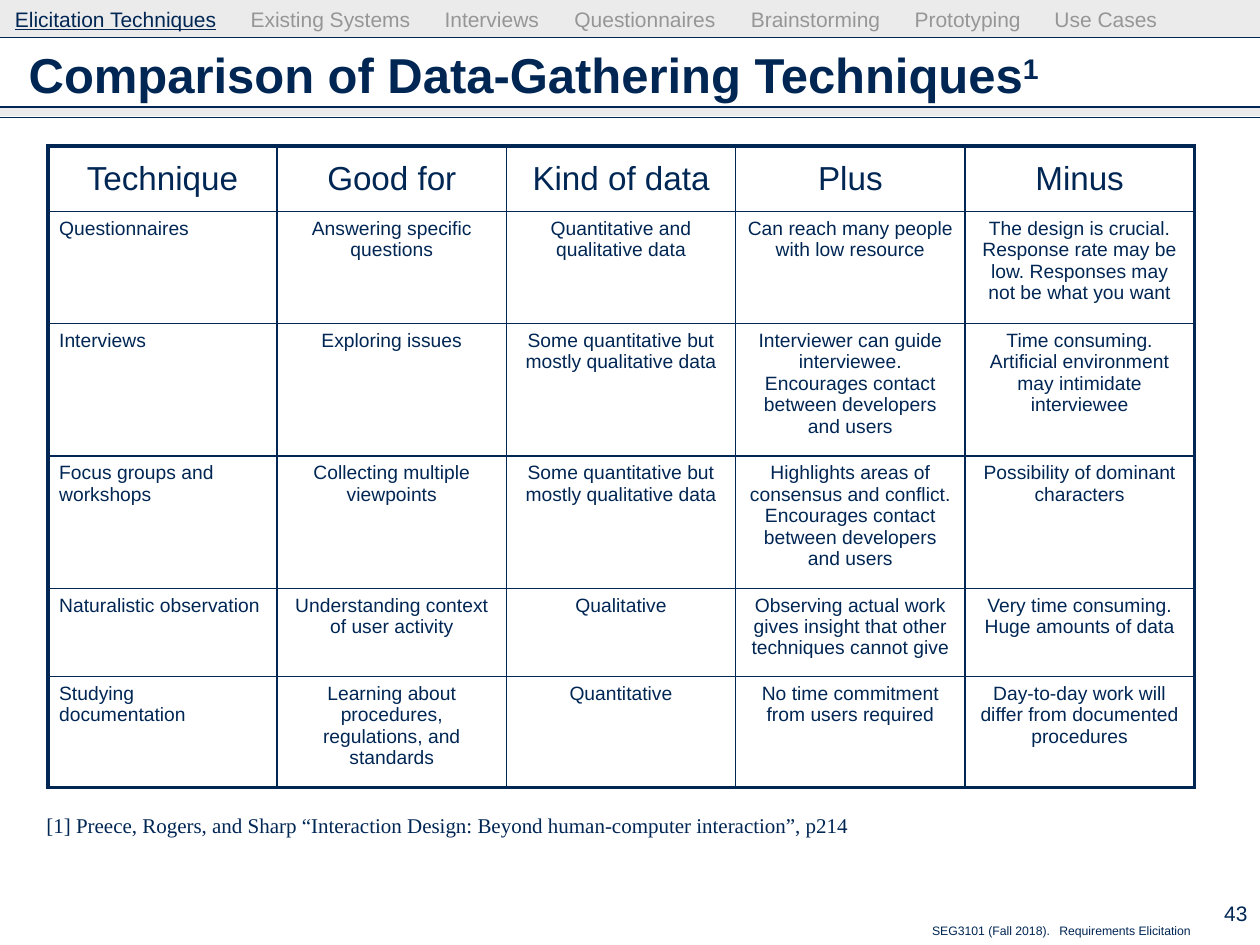
import pptx
import pptx.dml.color
import pptx.enum.shapes
import pptx.enum.text
import pptx.oxml.ns
import pptx.util
from lxml import etree

Inches = pptx.util.Inches
Pt = pptx.util.Pt
ALIGN = pptx.enum.text.PP_ALIGN
ANCHOR = pptx.enum.text.MSO_ANCHOR


def color(hex_string):
    return pptx.dml.color.RGBColor.from_string(hex_string)


def add_element(parent, tag, **attributes):
    values = {name: str(value) for name, value in attributes.items()}
    return etree.SubElement(parent, pptx.oxml.ns.qn(tag), values)


class SlideBuilder:
    navy = "002654"
    band = "CDCDCD"
    muted = "969696"
    sans = "Arial"
    serif = "Times New Roman"

    def __init__(self, slide):
        self.slide = slide

    def style(self, paragraph, size, font=None, bold=False):
        paragraph.font.name = font or self.sans
        paragraph.font.size = Pt(size)
        paragraph.font.bold = bold
        paragraph.font.color.rgb = color(self.navy)

    def add_band(self, top, height):
        shape = self.slide.shapes.add_shape(
            pptx.enum.shapes.MSO_SHAPE.RECTANGLE,
            Inches(0), Inches(top), Inches(10), Inches(height))
        shape.shadow.inherit = False
        shape.line.fill.background()
        shape.fill.solid()
        shape.fill.fore_color.rgb = color(self.band)
        fill_color = shape._element.spPr.find(".//" + pptx.oxml.ns.qn("a:srgbClr"))
        add_element(fill_color, "a:alpha", val=40000)

    def add_rule(self, top):
        connector = self.slide.shapes.add_connector(
            pptx.enum.shapes.MSO_CONNECTOR.STRAIGHT,
            Inches(0), Inches(top), Inches(10), Inches(top))
        connector.line.color.rgb = color(self.navy)
        connector.line.width = Pt(0.75)
        add_element(connector._element.spPr, "a:effectLst")

    def add_text(self, text, box, size, font=None, bold=False, tabs=(),
                 align=ALIGN.LEFT, anchor=ANCHOR.TOP, margin_top=0.05):
        shape = self.slide.shapes.add_textbox(*map(Inches, box))
        frame = shape.text_frame
        frame.word_wrap = True
        frame.vertical_anchor = anchor
        frame.margin_top = Inches(margin_top)
        paragraph = frame.paragraphs[0]
        paragraph.alignment = align
        if tabs:
            tab_list = add_element(paragraph._p.get_or_add_pPr(), "a:tabLst")
            for position in tabs:
                add_element(tab_list, "a:tab", pos=Inches(position), algn="l")
        self.style(paragraph, size, font, bold)
        if text:
            paragraph.add_run().text = text
        return paragraph

    def add_title(self, text, superscript, box):
        paragraph = self.add_text(text, box, 28, bold=True, anchor=ANCHOR.MIDDLE)
        run = paragraph.add_run()
        run.text = superscript
        run._r.get_or_add_rPr().set("baseline", "30000")

    def add_navigation(self, current, others, box, tabs):
        paragraph = self.add_text("", box, 12, tabs=tabs, margin_top=0)
        run = paragraph.add_run()
        run.text = current
        run.font.underline = True
        for topic in others:
            run = paragraph.add_run()
            run.text = "\t" + topic
            run.font.color.rgb = color(self.muted)

    def add_borders(self, cell, widths):
        properties = cell._tc.get_or_add_tcPr()
        for side, width in widths.items():
            line = add_element(properties, "a:ln" + side, w=Pt(width))
            fill = add_element(line, "a:solidFill")
            add_element(fill, "a:srgbClr", val=self.navy)

    def add_table(self, rows, left, top, column_width, row_heights):
        last_row, last_column = len(rows) - 1, len(rows[0]) - 1
        table = self.slide.shapes.add_table(
            len(rows), len(rows[0]), Inches(left), Inches(top),
            Inches(column_width * len(rows[0])), Inches(sum(row_heights))).table
        table.first_row = False
        table.horz_banding = False
        for column in table.columns:
            column.width = Inches(column_width)
        for row, height in zip(table.rows, row_heights):
            row.height = Inches(height)
        for i, texts in enumerate(rows):
            for j, text in enumerate(texts):
                cell = table.cell(i, j)
                cell.margin_left = cell.margin_right = Inches(0.09)
                cell.margin_top = cell.margin_bottom = Inches(0.05)
                self.add_borders(cell, {
                    "L": 2.25 if j == 0 else 1,
                    "R": 2.25 if j == last_column else 1,
                    "T": 2.25 if i == 0 else 1,
                    "B": 2.25 if i == last_row else 1,
                })
                cell.fill.background()
                cell.text = text
                paragraph = cell.text_frame.paragraphs[0]
                is_label = i > 0 and j == 0
                paragraph.alignment = ALIGN.LEFT if is_label else ALIGN.CENTER
                if i == 0:
                    paragraph.line_spacing = Pt(26)
                self.style(paragraph, 19 if i == 0 else 11)


TECHNIQUES = [
    ["Technique", "Good for", "Kind of data", "Plus", "Minus"],
    ["Questionnaires", "Answering specific questions",
     "Quantitative and qualitative data",
     "Can reach many people with low resource",
     "The design is crucial. Response rate may be low. "
     "Responses may not be what you want"],
    ["Interviews", "Exploring issues",
     "Some quantitative but mostly qualitative data",
     "Interviewer can guide interviewee. "
     "Encourages contact between developers and users",
     "Time consuming. Artificial environment may intimidate interviewee"],
    ["Focus groups and workshops", "Collecting multiple viewpoints",
     "Some quantitative but mostly qualitative data",
     "Highlights areas of consensus and conflict. "
     "Encourages contact between developers and users",
     "Possibility of dominant characters"],
    ["Naturalistic observation", "Understanding context of user activity",
     "Qualitative",
     "Observing actual work gives insight that other techniques cannot give",
     "Very time consuming. Huge amounts of data"],
    ["Studying documentation",
     "Learning about procedures, regulations, and standards",
     "Quantitative", "No time commitment from users required",
     "Day-to-day work will differ from documented procedures"],
]


def main():
    presentation = pptx.Presentation()
    presentation.slide_width = Inches(10)
    presentation.slide_height = Inches(7.5)
    builder = SlideBuilder(
        presentation.slides.add_slide(presentation.slide_layouts[6]))

    builder.add_text("SEG3101 (Fall 2018).\tRequirements Elicitation",
                     (7.3, 7.28, 2.4, 0.22), 7, tabs=[1.01])
    builder.add_band(0, 0.3)
    builder.add_band(0.85, 0.07)
    for top in (0.85, 0.3, 0.93):
        builder.add_rule(top)
    builder.add_text("43", (9.3, 7.08, 0.7, 0.34), 12,
                     align=ALIGN.RIGHT, anchor=ANCHOR.MIDDLE)
    builder.add_title("Comparison of Data-Gathering Techniques", "1",
                      (0.13, 0.26, 9.74, 0.66))
    builder.add_text("[1] Preece, Rogers, and Sharp “Interaction Design: "
                     "Beyond human-computer interaction”, p214",
                     (0.27, 6.4, 6.8, 0.3), 12, font=builder.serif)
    builder.add_table(TECHNIQUES, 0.38, 1.16, 1.82,
                      [0.52, 0.89, 1.05, 1.05, 0.7, 0.88])
    builder.add_navigation(
        "Elicitation Techniques",
        ["Existing Systems", "Interviews", "Questionnaires",
         "Brainstorming", "Prototyping", "Use Cases"],
        (0.02, 0.05, 9.38, 0.25), [1.87, 3.41, 4.44, 5.84, 7.14, 8.25])

    presentation.save("out.pptx")


if __name__ == "__main__":
    main()
